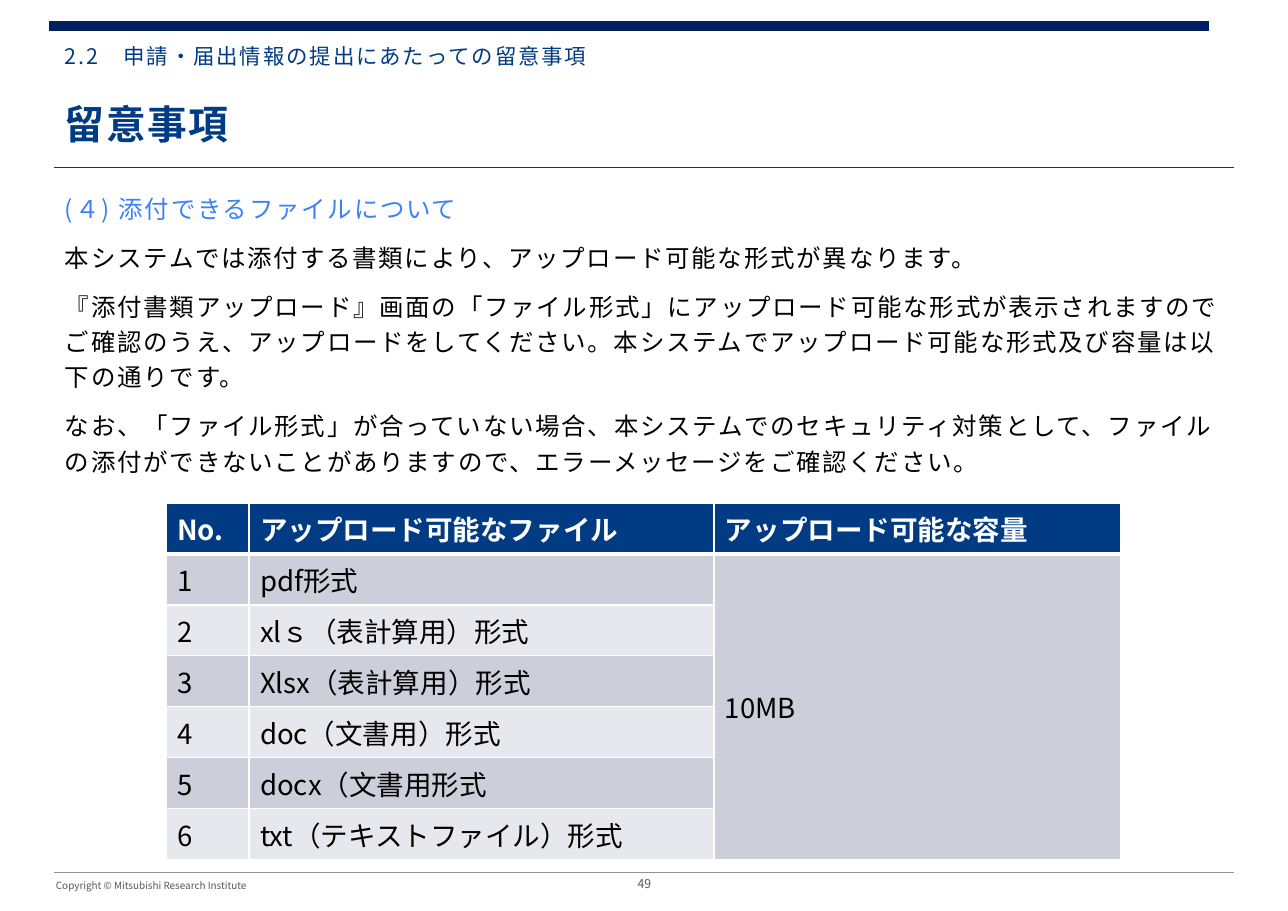
from dataclasses import dataclass

from lxml.etree import SubElement
from pptx import Presentation
from pptx.dml.color import RGBColor as RGB
from pptx.enum.shapes import MSO_CONNECTOR as Conn
from pptx.enum.text import MSO_ANCHOR as Anchor, MSO_AUTO_SIZE as AutoSize, PP_ALIGN as Align
from pptx.oxml.ns import qn
from pptx.util import Emu, Pt


@dataclass(frozen=True)
class Theme:
    font: str = "Noto Sans CJK JP"
    blue: str = "003B83"
    bar: str = "002060"
    accent: str = "3C82F5"
    text: str = "000000"
    white: str = "FFFFFF"
    footer: str = "595757"
    rule: str = "939292"
    bands: tuple = ("CCCED9", "E7E8ED")
    section_size: float = 14
    heading_size: float = 26
    body_size: float = 16
    table_size: float = 18
    copyright_size: float = 6.5
    page_size: float = 8


THEME = Theme()
PX_PER_INCH = 110.2

BODY = [
    "(４) 添付できるファイルについて",
    "本システムでは添付する書類により、アップロード可能な形式が異なります。",
    "『添付書類アップロード』画面の「ファイル形式」にアップロード可能な形式が表示されますので"
    "ご確認のうえ、アップロードをしてください。本システムでアップロード可能な形式及び容量は"
    "以下の通りです。",
    "なお、「ファイル形式」が合っていない場合、本システムでのセキュリティ対策として、"
    "ファイルの添付ができないことがありますので、エラーメッセージをご確認ください。",
]
HEADER = ["No.", "アップロード可能なファイル", "アップロード可能な容量"]
FORMATS = [
    "pdf形式",
    "xlｓ（表計算用）形式",
    "Xlsx（表計算用）形式",
    "doc（文書用）形式",
    "docx（文書用形式",
    "txt（テキストファイル）形式",
]
CAPACITY = "10MB"


def px(n):
    return Emu(round(n * 914400 / PX_PER_INCH))


def style_runs(p, size, color, bold=False, spacing=0):
    for r in p.runs:
        r.font.size = Pt(size)
        r.font.bold = bold
        r.font.name = THEME.font
        r.font.color.rgb = RGB.from_string(color)
        rPr = r.font._element
        if spacing:
            rPr.set("spc", str(round(spacing * 100)))
        SubElement(rPr, qn("a:ea")).set("typeface", THEME.font)


def set_frame(s, box, anchor):
    s.left, s.top, s.width, s.height = map(px, box)
    tf = s.text_frame
    tf.word_wrap = True
    tf.auto_size = AutoSize.NONE
    tf.vertical_anchor = anchor
    tf.margin_left = tf.margin_top = tf.margin_right = tf.margin_bottom = 0
    return tf


def fill_placeholder(s, box, texts, colors, size, anchor=Anchor.TOP, bold=False,
                     spacing=1.2, line_spacing=1.0, after=0):
    tf = set_frame(s, box, anchor)
    tf.text = "\n".join(texts)
    for p, color in zip(tf.paragraphs, colors):
        pPr = p._p.get_or_add_pPr()
        pPr.set("marL", "0")
        pPr.set("indent", "0")
        SubElement(pPr, qn("a:buNone"))
        p.alignment = Align.LEFT
        p.line_spacing = line_spacing
        p.space_before = Pt(0)
        p.space_after = Pt(after)
        style_runs(p, size, color, bold, spacing)


def add_label(slide, box, text, size, align=Align.LEFT):
    s = slide.shapes.add_textbox(0, 0, 0, 0)
    tf = set_frame(s, box, Anchor.BOTTOM)
    tf.text = text
    p = tf.paragraphs[0]
    p.alignment = align
    style_runs(p, size, THEME.footer)


def add_rule(slide, y, right, color, width, cap="flat"):
    s = slide.shapes.add_connector(Conn.STRAIGHT, px(54), px(y), px(right), px(y))
    s.line.color.rgb = RGB.from_string(color)
    s.line.width = Pt(width)
    s.line._get_or_add_ln().set("cap", cap)
    SubElement(s._element.spPr, qn("a:effectLst"))


def set_borders(cell, top, bottom):
    tcPr = cell._tc.get_or_add_tcPr()
    for side, width in (("L", 1), ("R", 1), ("T", top), ("B", bottom)):
        ln = SubElement(tcPr, qn(f"a:ln{side}"), w=str(Pt(width)))
        fill = SubElement(ln, qn("a:solidFill"))
        SubElement(fill, qn("a:srgbClr")).set("val", THEME.white)


def add_format_table(slide):
    rows = [HEADER] + [[str(i), name, ""] for i, name in enumerate(FORMATS, 1)]
    rows[1][2] = CAPACITY
    widths = [83, 465, 407]
    s = slide.shapes.add_table(len(rows), len(widths), px(166), px(503),
                               px(sum(widths)), px(45 * len(rows)))
    table = s.table
    for column, width in zip(table.columns, widths):
        column.width = px(width)
    for i, row in enumerate(rows):
        table.rows[i].height = px(45)
        header = i == 0
        for j, text in enumerate(row):
            cell = table.cell(i, j)
            set_borders(cell, 3 if i == 1 else 1, 3 if header else 1)
            cell.fill.solid()
            color = THEME.blue if header else THEME.bands[(i - 1) % 2]
            cell.fill.fore_color.rgb = RGB.from_string(color)
            cell.text_frame.text = text
            style_runs(cell.text_frame.paragraphs[0], THEME.table_size,
                       THEME.white if header else THEME.text, header)
    capacity = table.cell(1, 2)
    capacity.merge(table.cell(len(FORMATS), 2))
    capacity.vertical_anchor = Anchor.MIDDLE


def main():
    prs = Presentation()
    prs.slide_width, prs.slide_height = px(1288), px(911)
    slide = prs.slides.add_slide(prs.slide_layouts[3])
    section, heading, body = slide.placeholders

    add_rule(slide, 26, 1204, THEME.bar, 7, "sq")
    add_rule(slide, 167, 1234, THEME.blue, 0.6)
    add_rule(slide, 872, 1234, THEME.rule, 0.35)
    fill_placeholder(section, (65, 43, 1111, 26), ["2.2　申請・届出情報の提出にあたっての留意事項"],
                     [THEME.blue], THEME.section_size)
    fill_placeholder(heading, (65, 89, 1111, 58), ["留意事項"], [THEME.blue],
                     THEME.heading_size, Anchor.BOTTOM, bold=True, spacing=1, line_spacing=1.1)
    fill_placeholder(body, (65, 188, 1158, 291), BODY, [THEME.accent] + [THEME.text] * 3,
                     THEME.body_size, line_spacing=1.2, after=9)
    add_format_table(slide)
    add_label(slide, (56, 879, 1176, 12), "Copyright © Mitsubishi Research Institute",
              THEME.copyright_size)
    add_label(slide, (601, 877, 87, 14), "49", THEME.page_size, Align.CENTER)
    prs.save("out.pptx")


if __name__ == "__main__":
    main()
